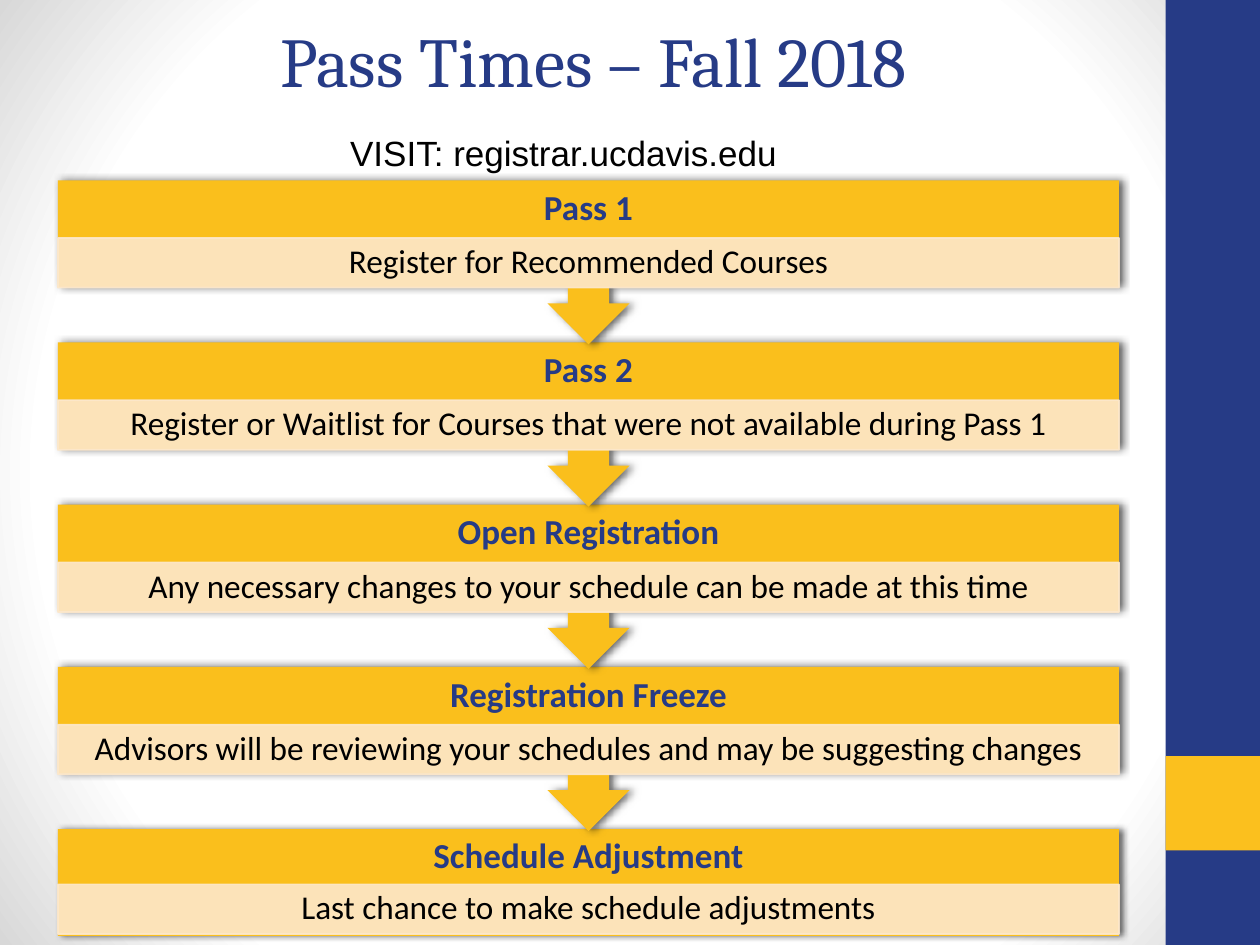
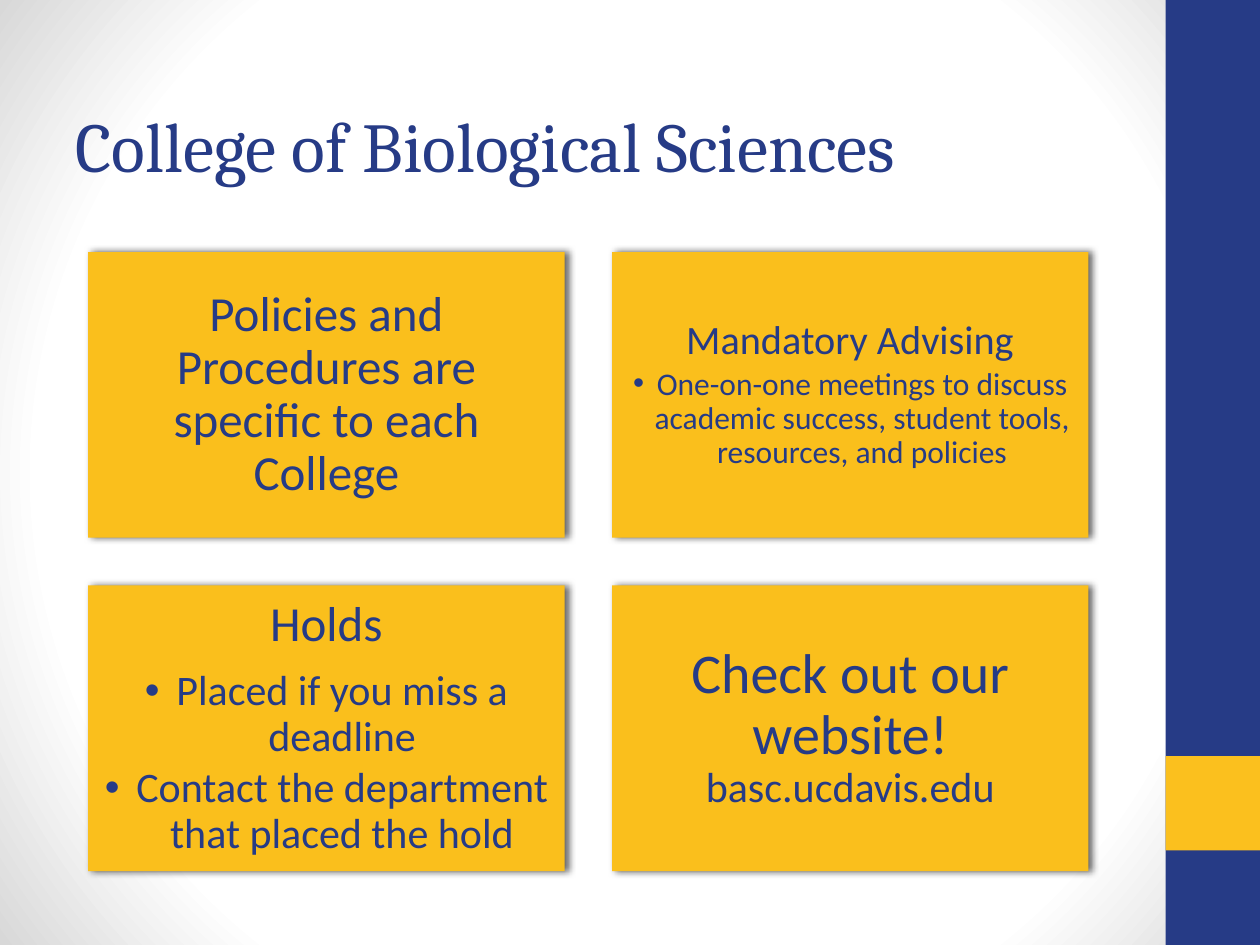
from dataclasses import dataclass

from pptx import Presentation
from pptx.dml.color import RGBColor as Color
from pptx.enum.shapes import MSO_SHAPE as Shape
from pptx.enum.text import MSO_ANCHOR as Anchor, MSO_AUTO_SIZE as AutoSize, PP_ALIGN as Align
from pptx.oxml import parse_xml
from pptx.oxml.ns import nsdecls, qn
from pptx.util import Pt


@dataclass(frozen=True)
class Theme:
    """Colours, fonts and type sizes shared by the deck."""
    navy: str = "263B86"
    band_gold: str = "FBC01E"
    gold: str = "FABF1C"
    cream: str = "FDE8CB"
    black: str = "000000"
    white: str = "FFFFFF"
    edge: str = "D8D8D8"
    title_font: str = "Cambria"
    body_font: str = "Calibri"
    note_font: str = "Arial"
    title_size: int = 40
    stage_size: int = 20
    detail_size: int = 19
    huge: int = 32
    large: int = 28
    medium: int = 24
    heading: int = 23
    small: int = 18


THEME = Theme()
TITLE_ONLY = 5

STAGES = [
    ("Pass 1", "Register for Recommended Courses"),
    ("Pass 2", "Register or Waitlist for Courses that were not available during Pass 1"),
    ("Open Registration", "Any necessary changes to your schedule can be made at this time"),
    ("Registration Freeze", "Advisors will be reviewing your schedules and may be suggesting changes"),
    ("Schedule Adjustment", "Last chance to make schedule adjustments"),
]

CARDS = [
    [("Policies and Procedures are specific to each College", dict(size=THEME.large))],
    [
        ("Mandatory Advising", dict(size=THEME.heading)),
        ("One-on-one meetings to discuss academic success, student tools, resources, and policies",
         dict(size=THEME.small, hanging=13.5, before=2.7)),
    ],
    [
        ("Holds", dict(size=THEME.large)),
        ("Placed if you miss a deadline", dict(size=THEME.medium, hanging=18, before=9.8)),
        ("Contact the department that placed the hold",
         dict(size=THEME.medium, hanging=18, before=3.6)),
    ],
    [
        ("Check out our website! ", dict(size=THEME.huge)),
        ("basc.ucdavis.edu", dict(size=THEME.medium, joined=True)),
    ],
]


def add_bullet(para, hanging):
    """Give a paragraph a hanging bullet."""
    para.level = 1
    props = para._p.get_or_add_pPr()
    props.set("marL", str(Pt(hanging)))
    props.set("indent", str(-Pt(hanging)))
    props.append(parse_xml(f'<a:buFont {nsdecls("a")} typeface="Arial"/>'))
    props.append(parse_xml(f'<a:buChar {nsdecls("a")} char="•"/>'))


def write(frame, text, size, font=THEME.body_font, color=THEME.navy, bold=False,
          align=Align.CENTER, spacing=0.9, before=None, hanging=None, joined=False):
    """Write a formatted paragraph, or join a span to the last one."""
    para = frame.paragraphs[-1]
    if not joined:
        if para.runs:
            para = frame.add_paragraph()
        if hanging:
            add_bullet(para, hanging)
        para.alignment = align
        para.line_spacing = spacing
        if before:
            para.space_before = Pt(before)
    span = para.add_run()
    span.text = text
    span.font.name = font
    span.font.size = Pt(size)
    span.font.bold = bold
    span.font.color.rgb = Color.from_string(color)


def set_frame(frame, inset_x, inset_y, wrap=True):
    """Centre a text frame vertically and set its insets."""
    frame.auto_size = AutoSize.NONE
    frame.word_wrap = wrap
    frame.vertical_anchor = Anchor.MIDDLE
    frame.margin_left = frame.margin_right = Pt(inset_x)
    frame.margin_top = frame.margin_bottom = Pt(inset_y)
    return frame


def add_panel(page, left, top, width, height, fill, kind=Shape.RECTANGLE, shadow=False):
    """Add a filled shape without outline, with a soft shadow on request."""
    panel = page.shapes.add_shape(kind, Pt(left), Pt(top), Pt(width), Pt(height))
    panel.fill.solid()
    panel.fill.fore_color.rgb = Color.from_string(fill)
    panel.line.fill.background()
    panel.shadow.inherit = False
    if shadow:
        panel.element.spPr.find(qn("a:effectLst")).append(parse_xml(
            f'<a:outerShdw {nsdecls("a")} blurRad="{Pt(4)}" dist="{Pt(2)}" dir="0" rotWithShape="0">'
            f'<a:srgbClr val="{THEME.black}"><a:alpha val="60000"/></a:srgbClr></a:outerShdw>'))
    return panel


def add_label(page, left, top, width, height, inset_x=0, inset_y=0, wrap=True):
    """Add a text box and return its frame."""
    box = page.shapes.add_textbox(Pt(left), Pt(top), Pt(width), Pt(height))
    return set_frame(box.text_frame, inset_x, inset_y, wrap)


def add_page(deck, title, left, top, align):
    """Add a title-only page with its title placed."""
    page = deck.slides.add_slide(deck.slide_layouts[TITLE_ONLY])
    box = page.shapes.title
    box.left, box.top, box.width, box.height = Pt(left), Pt(top), Pt(600), Pt(68.4)
    write(set_frame(box.text_frame, 7.2, 3.6), title, THEME.title_size,
          font=THEME.title_font, align=align, spacing=1.0)
    return page


def style_master(deck, page):
    """Put the radial background and the side bands on the master."""
    master = deck.slide_master
    master.background.fill.solid()
    holder = master.element.find(".//" + qn("p:bgPr"))
    stops = "".join(
        f'<a:gs pos="{position * 1000}"><a:srgbClr val="{color}"/></a:gs>'
        for position, color in [(0, THEME.white), (75, THEME.white), (100, THEME.edge)])
    holder.replace(holder[0], parse_xml(
        f'<a:gradFill {nsdecls("a")} rotWithShape="1"><a:gsLst>{stops}</a:gsLst>'
        '<a:path path="circle"><a:fillToRect l="50000" t="50000" r="50000" b="50000"/></a:path>'
        '</a:gradFill>'))
    bands = [add_panel(page, 666, 0, 54, 540, THEME.navy),
             add_panel(page, 666, 432, 54, 54, THEME.band_gold)]
    for position, band in enumerate(bands, start=2):
        master.shapes.element.insert(position, band.element)


def add_detail(page, text, left, top, width, height):
    """Add the translucent strip that explains a stage."""
    strip = add_panel(page, left, top, width, height, THEME.cream)
    strip.line.color.rgb = Color.from_string(THEME.cream)
    strip.line.width = Pt(1)
    for color in strip.element.spPr.iter(qn("a:srgbClr")):
        color.append(parse_xml(f'<a:alpha {nsdecls("a")} val="90000"/>'))
    write(set_frame(strip.text_frame, 10.8, 2.2), text, THEME.detail_size, color=THEME.black)


def add_stage(page, number, name, detail):
    """Add one registration stage; all but the last point to the next."""
    left, width, top = 33.1, 606.3, 103 + number * 92.7
    if number == len(STAGES) - 1:
        header = 31.6
        add_panel(page, left, top, width, 61, THEME.gold, shadow=True)
    else:
        header = 33
        callout = add_panel(page, left, top, width, 93.8, THEME.gold,
                            Shape.UP_ARROW_CALLOUT, shadow=True)
        callout.rotation = 180
        for index, value in enumerate((0.25, 0.25, 0.25, 0.65)):
            callout.adjustments[index] = value
    write(add_label(page, left, top, width, header), name, THEME.stage_size, bold=True)
    add_detail(page, detail, left, top + header, width, 28.4)


def add_card(page, number, lines):
    """Add one card of the two-column grid."""
    width, height, gap = 272.2, 163.3, 27.2
    row, column = divmod(number, 2)
    card = add_panel(page, 50.4 + column * (width + gap), 144 + row * (height + gap),
                     width, height, THEME.gold, shadow=True)
    frame = set_frame(card.text_frame, 8.5, 8.5)
    for text, style in lines:
        write(frame, text, **style)


def main():
    """Build and save the deck."""
    deck = Presentation()
    deck.slide_width, deck.slide_height = Pt(720), Pt(540)

    page = add_page(deck, "Pass Times – Fall 2018", 39, 0, Align.CENTER)
    style_master(deck, page)
    for number, (name, detail) in reversed(list(enumerate(STAGES))):
        add_stage(page, number, name, detail)
    visit = add_label(page, 193, 71.3, 269, 31.7, 7.2, 3.6, wrap=False)
    write(visit, "VISIT: registrar.ucdavis.edu", THEME.stage_size, font=THEME.note_font,
          color=THEME.black, align=Align.LEFT, spacing=1.0)

    page = add_page(deck, "College of Biological Sciences", 36, 48.2, Align.LEFT)
    for number, lines in enumerate(CARDS):
        add_card(page, number, lines)

    deck.save("out.pptx")


if __name__ == "__main__":
    main()
